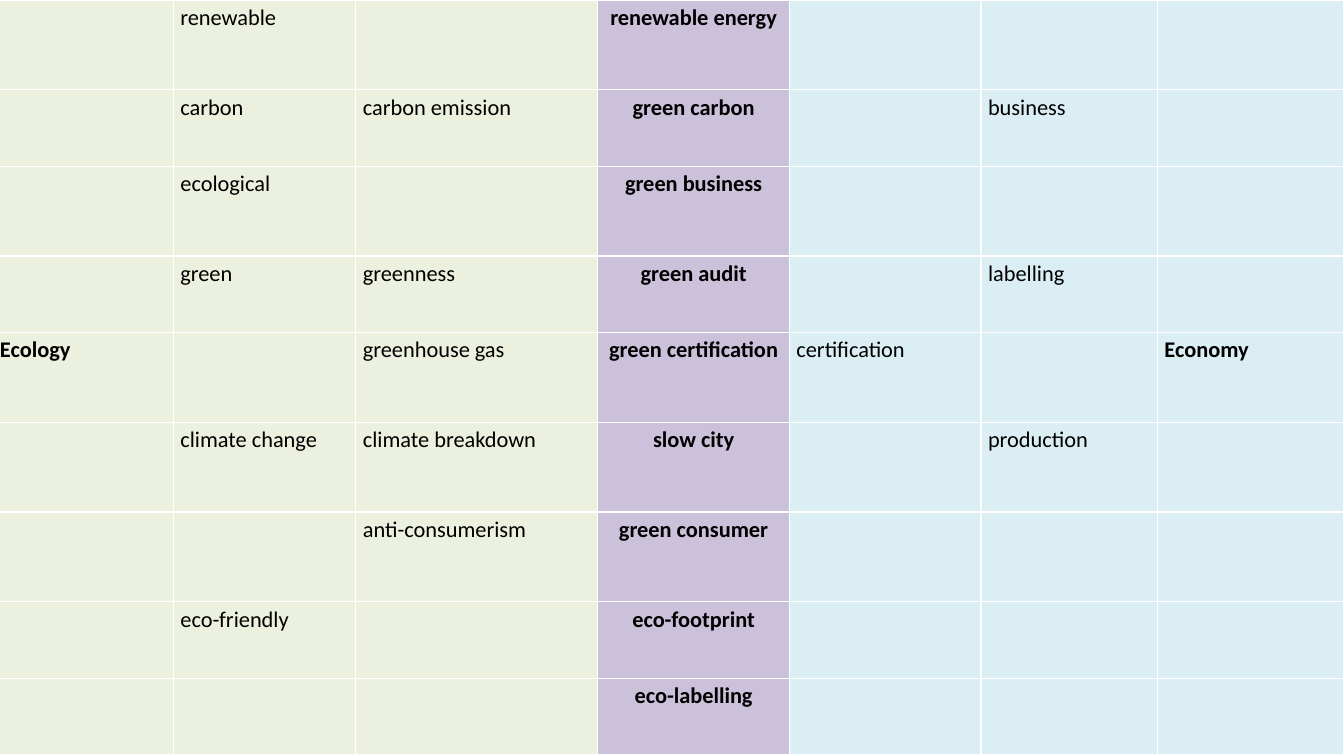
from lxml.etree import SubElement as Sub
from pptx import Presentation
from pptx.dml.color import RGBColor
from pptx.enum.text import PP_ALIGN as Align
from pptx.oxml.ns import qn
from pptx.util import Inches, Pt

GREEN = RGBColor(0xEB, 0xF1, 0xDE)
PURPLE = RGBColor(0xCC, 0xC1, 0xDA)
BLUE = RGBColor(0xDB, 0xEE, 0xF4)
BLACK = RGBColor(0, 0, 0)
WHITE = RGBColor(0xFF, 0xFF, 0xFF)

FILLS = [GREEN] * 3 + [PURPLE] + [BLUE] * 3
WIDTHS = [1.79, 1.81, 2.4, 1.9, 1.9, 1.75, 1.85]
TALL, SHORT = 0.89, 0.76
HEIGHTS = [TALL, SHORT, TALL, SHORT, TALL, TALL, TALL, SHORT, SHORT]
MID = 3
HEADS = ("Ecology", "Economy")
TERMS = [
    ["", "renewable", "", "renewable energy", "", "", ""],
    ["", "carbon", "carbon emission", "green carbon", "", "business", ""],
    ["", "ecological", "", "green business", "", "", ""],
    ["", "green", "greenness", "green audit", "", "labelling", ""],
    ["Ecology", "", "greenhouse gas", "green certification",
     "certification", "", "Economy"],
    ["", "climate change", "climate breakdown", "slow city", "",
     "production", ""],
    ["", "", "anti-consumerism", "green consumer", "", "", ""],
    ["", "eco-friendly", "", "eco-footprint", "", "", ""],
    ["", "", "", "eco-labelling", "", "", ""],
]
INSETS = {"margin_left": Inches(0.07), "margin_right": Inches(0.07),
          "margin_top": 0, "margin_bottom": 0}
FONT = {"name": "Calibri", "size": Pt(16)}


def apply(item, values):
    """Set each named value on the item."""
    for name, value in values.items():
        setattr(item, name, value)


def edge(cell):
    """Draw thin white lines on all four sides of a cell."""
    props = cell._tc.get_or_add_tcPr()
    for side in ("lnL", "lnR", "lnT", "lnB"):
        line = Sub(props, qn(f"a:{side}"), w=str(Pt(1)))
        fill = Sub(line, qn("a:solidFill"))
        Sub(fill, qn("a:srgbClr"), val=str(WHITE))


def paint(cell, color):
    """Give a cell its insets, borders and fill."""
    apply(cell, INSETS)
    edge(cell)
    cell.fill.solid()
    cell.fill.fore_color.rgb = color


def write(cell, term, center):
    """Put a term in a cell, bold when it is central or a heading."""
    para = cell.text_frame.paragraphs[0]
    align = Align.CENTER if center else Align.JUSTIFY
    apply(para, {"alignment": align, "line_spacing": 1.15})
    run = para.add_run()
    run.text = term
    apply(run.font, {**FONT, "bold": center or term in HEADS})
    run.font.color.rgb = BLACK


def add_grid(slide):
    """Add the table of terms between ecology and economy."""
    frame = slide.shapes.add_table(
        len(TERMS), len(WIDTHS), Inches(-0.07), 0,
        Inches(sum(WIDTHS)), Inches(sum(HEIGHTS)))
    table = frame.table
    apply(table, {"first_row": False, "horz_banding": False})
    for col, width in zip(table.columns, WIDTHS):
        col.width = Inches(width)
    for row, height, terms in zip(table.rows, HEIGHTS, TERMS):
        row.height = Inches(height)
        for pos, (cell, term) in enumerate(zip(row.cells, terms)):
            paint(cell, FILLS[pos])
            if term:
                write(cell, term, pos == MID)


def main():
    """Build the slide and save it."""
    deck = Presentation()
    apply(deck, {"slide_width": Inches(13.33), "slide_height": Inches(7.5)})
    add_grid(deck.slides.add_slide(deck.slide_layouts[6]))
    deck.save("out.pptx")


if __name__ == "__main__":
    main()
